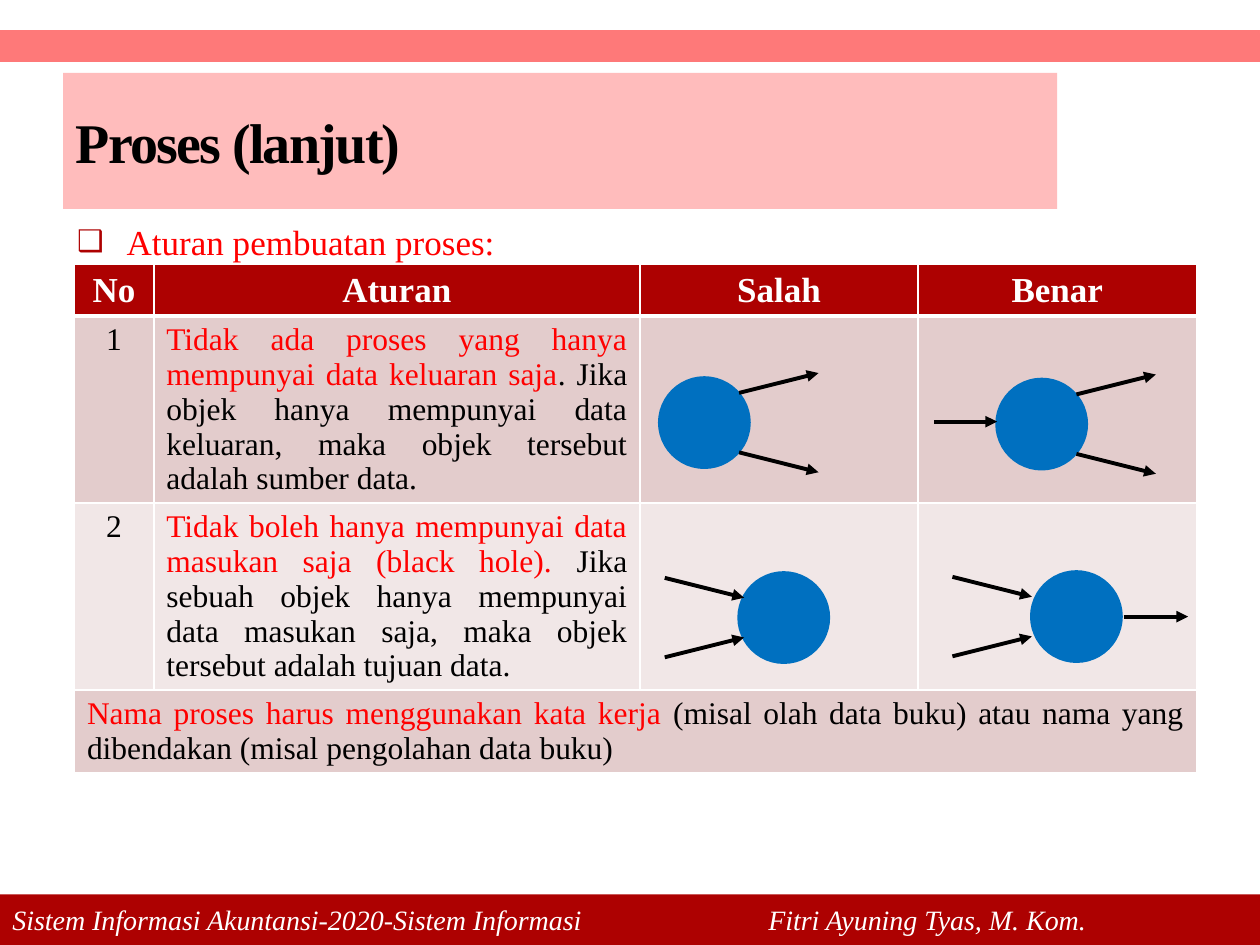
import dataclasses
import typing

import lxml.etree
import pptx
import pptx.dml.color
import pptx.enum.shapes
import pptx.enum.text
import pptx.oxml.ns
import pptx.util

Cm = pptx.util.Cm
Pt = pptx.util.Pt
ALIGN = pptx.enum.text.PP_ALIGN
MIDDLE = pptx.enum.text.MSO_ANCHOR.MIDDLE
SHAPE = pptx.enum.shapes.MSO_SHAPE
FACE = "Times New Roman"
DARK, RED, BLUE = "AD0101", "FF0000", "0070C0"
WHITE, BLACK = "FFFFFF", "000000"
ROSE, PALE = "E3CCCC", "F1E7E7"
HEAD = {"size": Pt(20), "bold": True}
PLAIN = {"size": Pt(18), "bold": False}
Run = tuple[str, str]
Arrow = tuple[float, float, float, float]


@dataclasses.dataclass
class Bar:
    """Full-width band, in centimetres."""
    top: float
    high: float
    fill: str


@dataclasses.dataclass
class Process:
    """Circle centre with arrows given relative to it."""
    x: float
    y: float
    arrows: list[Arrow]


def color(code: str) -> pptx.dml.color.RGBColor:
    """Turn a hex string into a colour."""
    return pptx.dml.color.RGBColor.from_string(code)


def add_tag(root: typing.Any, name: str, **attrs: str) -> typing.Any:
    """Append a drawing element with attributes."""
    return lxml.etree.SubElement(root, pptx.oxml.ns.qn(f"a:{name}"), attrs)


def place(item: typing.Any, *box: float) -> None:
    """Move and size an item."""
    for name, value in zip(("left", "top", "width", "height"), box):
        setattr(item, name, Cm(value))


def paint(shape: typing.Any, code: str) -> None:
    """Fill a shape with one colour."""
    shape.fill.solid()
    shape.fill.fore_color.rgb = color(code)


def write(para: typing.Any, runs: list[Run], align: typing.Any, style: dict[str, typing.Any]) -> None:
    """Write coloured runs in one style."""
    para.alignment = align
    for text, code in runs:
        run = para.add_run()
        run.text = text
        for name, value in {"name": FACE, **style}.items():
            setattr(run.font, name, value)
        run.font.color.rgb = color(code)


def draw_bar(slide: typing.Any, bar: Bar) -> typing.Any:
    """Draw a band across the slide."""
    shape = slide.shapes.add_shape(SHAPE.RECTANGLE, 0, Cm(bar.top), Cm(25.4), Cm(bar.high))
    shape.shadow.inherit = False
    paint(shape, bar.fill)
    shape.line.fill.background()
    return shape


def fill_cell(cell: typing.Any, code: str, base: float = 1) -> None:
    """Fill a cell and give it white borders."""
    props = cell._tc.get_or_add_tcPr()
    for side, width in {"lnL": 1, "lnR": 1, "lnT": 1, "lnB": base}.items():
        line = add_tag(props, side, w=str(Pt(width)))
        add_tag(add_tag(line, "solidFill"), "srgbClr", val=WHITE)
    paint(cell, code)


def draw_table(slide: typing.Any) -> None:
    """Draw the table of rules."""
    wides, highs = (1.6, 9.8, 5.61, 5.61), (1.04, 3.76, 3.76, 1.65)
    table = slide.shapes.add_table(4, 4, Cm(1.5), Cm(5.33), Cm(sum(wides)), Cm(sum(highs))).table
    for col, wide in zip(table.columns, wides):
        col.width = Cm(wide)
    for row, high, fill in zip(table.rows, highs, (DARK, ROSE, PALE, ROSE)):
        row.height = Cm(high)
        for cell in row.cells:
            fill_cell(cell, fill, 3 if fill == DARK else 1)
    for i, text in enumerate(("No", "Aturan", "Salah", "Benar")):
        write(table.cell(0, i).text_frame.paragraphs[0], [(text, WHITE)], ALIGN.CENTER, HEAD)
    rules = [
        [("Tidak ada proses yang hanya mempunyai data keluaran saja", RED),
         (". Jika objek hanya mempunyai data keluaran, maka objek tersebut adalah sumber data.", BLACK)],
        [("Tidak boleh hanya mempunyai data masukan saja (black hole). ", RED),
         ("Jika sebuah objek hanya mempunyai data masukan saja, "
          "maka objek tersebut adalah tujuan data.", BLACK)],
    ]
    for i, rule in enumerate(rules, 1):
        write(table.cell(i, 0).text_frame.paragraphs[0], [(str(i), BLACK)], ALIGN.CENTER, PLAIN)
        write(table.cell(i, 1).text_frame.paragraphs[0], rule, ALIGN.JUSTIFY, PLAIN)
    table.cell(3, 0).merge(table.cell(3, 3))
    note = [("Nama proses harus menggunakan kata kerja ", RED),
            ("(misal olah data buku) atau nama yang dibendakan (misal pengolahan data buku)", BLACK)]
    write(table.cell(3, 0).text_frame.paragraphs[0], note, ALIGN.JUSTIFY, PLAIN)


def pair(x1: float, y1: float, x2: float, y2: float) -> list[Arrow]:
    """Mirror an arrow about the centre line."""
    return [(x1, -y1, x2, -y2), (x1, y1, x2, y2)]


def draw_flow(slide: typing.Any, proc: Process) -> None:
    """Draw a process circle with its arrows as a group."""
    group = slide.shapes.add_group_shape()
    size = 1.8
    disc = group.shapes.add_shape(
        SHAPE.OVAL, Cm(proc.x - size / 2), Cm(proc.y - size / 2), Cm(size), Cm(size))
    disc.shadow.inherit = False
    paint(disc, BLUE)
    disc.line.color.rgb = color(BLUE)
    disc.line.width = Pt(2)
    for x1, y1, x2, y2 in proc.arrows:
        arrow = group.shapes.add_connector(
            pptx.enum.shapes.MSO_CONNECTOR.STRAIGHT,
            Cm(proc.x + x1), Cm(proc.y + y1), Cm(proc.x + x2), Cm(proc.y + y2))
        arrow.line.color.rgb = color(BLACK)
        arrow.line.width = Pt(2.25)
        add_tag(arrow.line._get_or_add_ln(), "tailEnd", type="triangle")
        add_tag(arrow._element.spPr, "effectLst")


def main() -> None:
    """Build the slide and save it."""
    deck = pptx.Presentation()
    deck.slide_width, deck.slide_height = Cm(25.4), Cm(19.05)
    slide = deck.slides.add_slide(deck.slide_layouts[1])
    title, body = slide.placeholders

    draw_bar(slide, Bar(0.61, 0.64, "FE7979"))
    foot = draw_bar(slide, Bar(18.03, 1.02, DARK)).text_frame
    foot.vertical_anchor = MIDDLE
    write(foot.paragraphs[0],
          [("Sistem Informasi Akuntansi-2020-Sistem Informasi\t\t\tFitri Ayuning Tyas, M. Kom.", WHITE)],
          ALIGN.LEFT, {"size": Pt(16), "italic": True})

    place(title, 1.27, 1.47, 20.04, 2.74)
    paint(title, "FFBCBC")
    title.text_frame.vertical_anchor = MIDDLE
    head = title.text_frame.paragraphs[0]
    write(head, [("Proses (lanjut)", BLACK)], ALIGN.LEFT, {"size": Pt(32), "bold": True})
    head.runs[0].font._element.set("spc", "-100")

    place(body, 1.3, 4.32, 22.83, 13.41)
    para = body.text_frame.paragraphs[0]
    para.space_before = Pt(0)
    props = para._p.get_or_add_pPr()
    props.set("marL", str(Cm(1)))
    props.set("indent", str(Cm(-1)))
    add_tag(add_tag(props, "buClr"), "srgbClr", val=DARK)
    add_tag(props, "buSzPct", val="85000")
    add_tag(props, "buChar", char="❑")
    write(para, [("Aturan pembuatan proses:", RED)], ALIGN.JUSTIFY, {"size": Pt(20)})

    draw_table(slide)
    outs = pair(0.7, 0.6, 2.3, 1)
    for proc in (
        Process(14.2, 8.52, outs),
        Process(21, 8.55, [*outs, (-2.17, -0.05, -0.9, -0.05)]),
        Process(15.8, 12.45, pair(-2.4, 0.8, -0.8, 0.4)),
        Process(21.7, 12.43, [*pair(-2.5, 0.8, -0.9, 0.4), (0.95, 0, 2.25, 0)]),
    ):
        draw_flow(slide, proc)
    deck.save("out.pptx")


if __name__ == "__main__":
    main()
